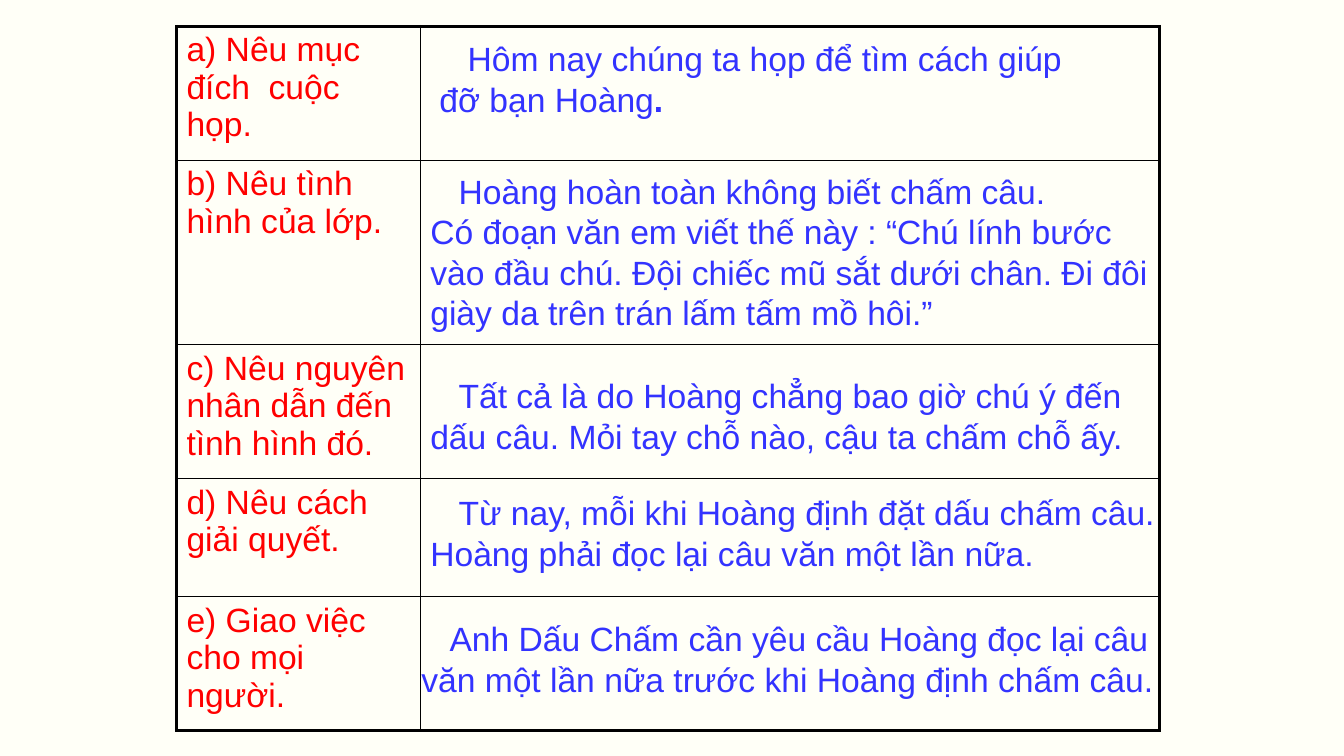
"""Build the slide that sets out the five steps of a class meeting."""
from lxml import etree
from pptx import Presentation
from pptx import util as u
from pptx.dml.color import RGBColor
from pptx.enum import text
from pptx.oxml import ns

CREAM = RGBColor(0xFF, 0xFF, 0xF7)
RED = RGBColor(0xFF, 0x00, 0x00)
BLUE = RGBColor(0x33, 0x33, 0xFF)
BLACK = RGBColor(0x00, 0x00, 0x00)

STEPS = [
    (1.33, "a) Nêu mục đích  cuộc họp."),
    (1.83, "b) Nêu tình hình của lớp."),
    (1.33, "c) Nêu nguyên nhân dẫn đến tình hình đó."),
    (1.17, "d) Nêu cách giải quyết."),
    (1.33, "e) Giao việc cho mọi người."),
]

ANSWERS = [
    (4.17, 0.33, 7.02, 0.91, [
        (0.37, ["Hôm nay chúng ta họp để tìm cách giúp"]),
        (0.09, ["đỡ bạn Hoàng", "."]),
    ]),
    (4.17, 1.64, 7.42, 1.72, [
        (0.28, ["Hoàng hoàn toàn không biết chấm câu."]),
        (0, ["Có đoạn văn em viết thế này : “Chú lính bước vào đầu chú. "
             "Đội chiếc mũ sắt dưới chân. Đi đôi giày da trên trán lấm tấm mồ hôi.”"]),
    ]),
    (4.17, 3.67, 7.5, 0.91, [
        (0.28, ["Tất cả là do Hoàng chẳng bao giờ chú ý đến dấu câu. "
                "Mỏi tay chỗ nào, cậu ta chấm chỗ ấy."]),
    ]),
    (4.17, 4.83, 7.5, 0.91, [
        (0.28, ["Từ nay, mỗi khi Hoàng định đặt dấu chấm câu. "
                "Hoàng phải đọc lại câu văn một lần nữa."]),
    ]),
    (4.08, 6.08, 7.58, 0.91, [
        (0.28, ["Anh Dấu Chấm cần yêu cầu Hoàng đọc lại câu văn một lần nữa "
                "trước khi Hoàng định chấm câu."]),
    ]),
]


class MeetingSlide:
    """Hold the text style and the slide being drawn."""

    font = "Arial"
    size = u.Pt(24)
    thick, thin = u.Pt(2.25), u.Pt(1)

    def __init__(self, slide):
        self.slide = slide
        slide.background.fill.solid()
        slide.background.fill.fore_color.rgb = CREAM

    def style(self, paragraph, color, pitch):
        paragraph.line_spacing = u.Pt(pitch)
        paragraph.font.name = self.font
        paragraph.font.size = self.size
        paragraph.font.color.rgb = color

    def border(self, cell, side, width):
        line = etree.SubElement(cell._tc.get_or_add_tcPr(), ns.qn(f"a:ln{side}"), w=str(width))
        fill = etree.SubElement(line, ns.qn("a:solidFill"))
        etree.SubElement(fill, ns.qn("a:srgbClr"), val=str(BLACK))

    def table(self, left, top, widths, steps):
        rows, cols = len(steps), len(widths)
        height = sum(step[0] for step in steps)
        grid = self.slide.shapes.add_table(
            rows, cols, u.Inches(left), u.Inches(top),
            u.Inches(sum(widths)), u.Inches(height)).table
        grid.first_row = grid.horz_banding = False
        for column, width in zip(grid.columns, widths):
            column.width = u.Inches(width)
        for r, (row_height, label) in enumerate(steps):
            grid.rows[r].height = u.Inches(row_height)
            for c in range(cols):
                cell = grid.cell(r, c)
                outer = {"L": c == 0, "R": c == cols - 1, "T": r == 0, "B": r == rows - 1}
                for side, is_outer in outer.items():
                    self.border(cell, side, self.thick if is_outer else self.thin)
                cell.fill.background()
            heading = grid.cell(r, 0).text_frame.paragraphs[0]
            heading.text = label
            self.style(heading, RED, 26.8)

    def answer(self, left, top, width, height, paragraphs):
        frame = self.slide.shapes.add_textbox(
            *map(u.Inches, (left, top, width, height))).text_frame
        frame.word_wrap = True
        frame.auto_size = text.MSO_AUTO_SIZE.SHAPE_TO_FIT_TEXT
        for i, (indent, runs) in enumerate(paragraphs):
            paragraph = frame.add_paragraph() if i else frame.paragraphs[0]
            paragraph._p.get_or_add_pPr().set("indent", str(u.Inches(indent)))
            for words in runs:
                run = paragraph.add_run()
                run.text = words
                if words == ".":
                    run.font.bold = True
            self.style(paragraph, BLUE, 28.9)


def main():
    deck = Presentation()
    deck.slide_width, deck.slide_height = u.Inches(13.33), u.Inches(7.5)
    meeting = MeetingSlide(deck.slides.add_slide(deck.slide_layouts[6]))
    meeting.table(1.75, 0.26, [2.42, 7.33], STEPS)
    for answer in ANSWERS:
        meeting.answer(*answer)
    deck.save("out.pptx")


if __name__ == "__main__":
    main()
